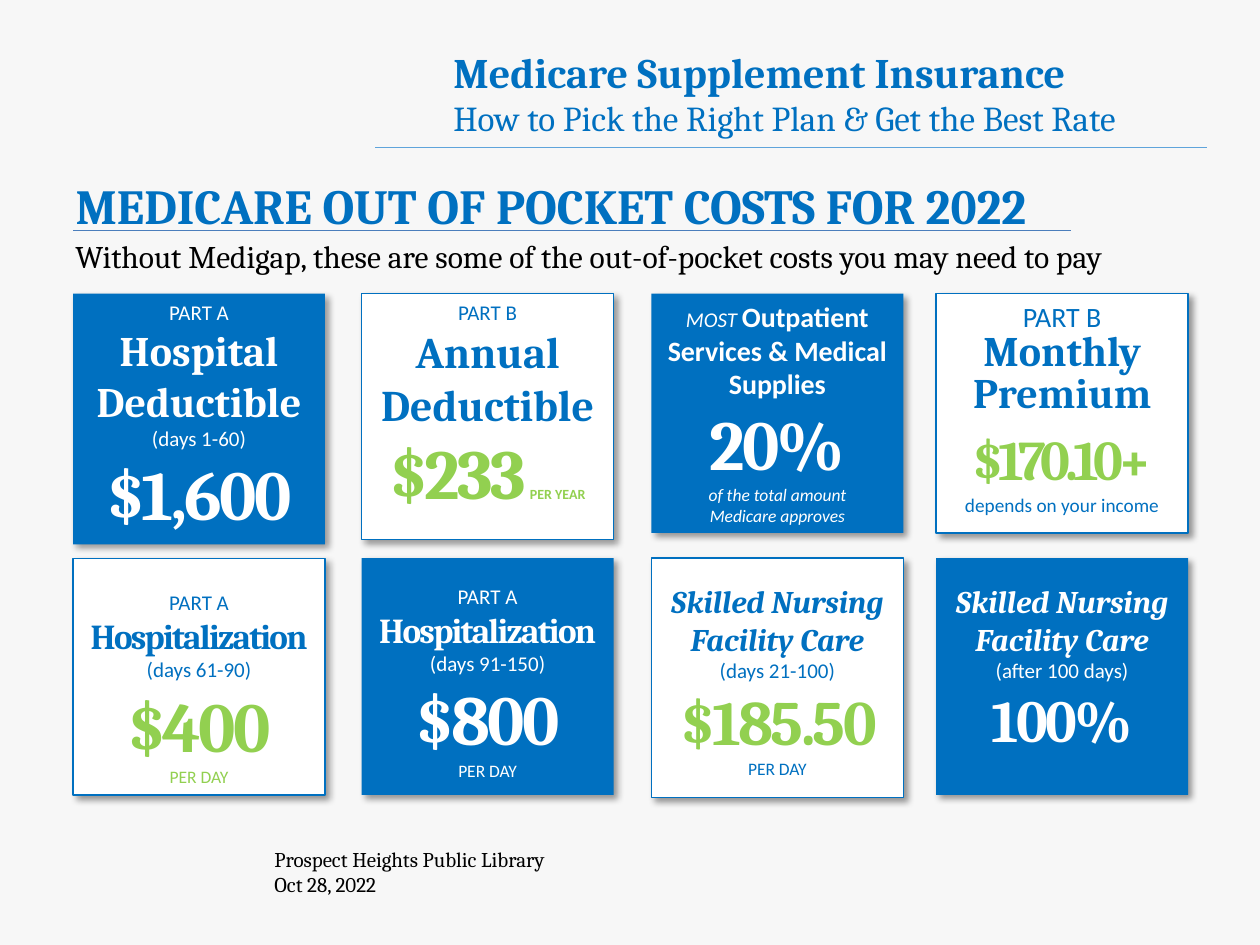
from pptx import Presentation
from pptx.dml.color import RGBColor
from pptx.enum.shapes import MSO_CONNECTOR, MSO_SHAPE
from pptx.enum.text import MSO_ANCHOR, MSO_AUTO_SIZE, PP_ALIGN
from pptx.oxml import parse_xml
from pptx.oxml.ns import nsdecls, qn
from pptx.util import Inches, Pt

RECT = MSO_SHAPE.RECTANGLE
LINE = MSO_CONNECTOR.STRAIGHT
TOP = MSO_ANCHOR.TOP
FIXED = MSO_AUTO_SIZE.NONE
LEFT, MID = PP_ALIGN.LEFT, PP_ALIGN.CENTER
HEAD, BODY = "Cambria", "Calibri"
HEX = {"back": "F7F7F7", "blue": "0070C0", "white": "FFFFFF", "green": "92D050",
       "black": "000000", "sky": "5FA4DB", "rule": "4B7EBC"}
COLOR = {name: RGBColor.from_string(code) for name, code in HEX.items()}


def write(frame, paras, ink, align=LEFT):
    frame.word_wrap = True
    frame.auto_size = FIXED
    frame.vertical_anchor = TOP
    for i, runs in enumerate(paras):
        para = frame.paragraphs[0] if i == 0 else frame.add_paragraph()
        para.alignment = align
        for text, size, face, style, gap, tint in runs:
            if text == "\n":
                para.add_line_break()
                continue
            run = para.add_run()
            run.text = text
            font = run.font
            font.size, font.name = Pt(size), face
            font.bold, font.italic = "b" in style, "i" in style
            font.color.rgb = COLOR[tint or ink]
            if gap:
                run._r.get_or_add_rPr().set("spc", str(int(gap * 100)))


def bit(text, size, face=BODY, style="", gap=0, tint=None):
    return text, size, face, style, gap, tint


deck = Presentation()
deck.slide_width, deck.slide_height = Inches(10), Inches(7.5)
slide = deck.slides.add_slide(deck.slide_layouts[5])
slide.background.fill.solid()
slide.background.fill.fore_color.rgb = COLOR["back"]

title = slide.shapes.title
title.left, title.top = Inches(0.5), Inches(1.34)
title.width, title.height = Inches(9), Inches(0.57)
write(title.text_frame, [[bit("MEDICARE OUT OF POCKET COSTS FOR 2022", 28, HEAD, "b")]], "blue")

texts = [
    (2.08, 6.67, 3.5, 0.5, "black",
     [[bit("Prospect Heights Public Library", 12, HEAD)], [bit("Oct 28, 2022", 12, HEAD)]]),
    (3.5, 0.32, 6.17, 0.84, "blue",
     [[bit("Medicare Supplement Insurance", 24, HEAD, "b"), bit("\n", 24),
       bit("How to Pick the Right Plan & Get the Best Rate", 20, HEAD)]]),
    (0.5, 1.83, 8.83, 0.4, "black",
     [[bit("Without Medigap, these are some of the out-of-pocket costs you may need to pay",
           18, HEAD)]]),
]
for x, y, wide, high, ink, paras in texts:
    box = slide.shapes.add_textbox(Inches(x), Inches(y), Inches(wide), Inches(high))
    write(box.text_frame, paras, ink)

for x, end, y, ink in [(2.98, 9.58, 1.17, "sky"), (0.58, 8.5, 1.83, "rule")]:
    rule = slide.shapes.add_connector(LINE, Inches(x), Inches(y), Inches(end), Inches(y))
    rule.line.color.rgb = COLOR[ink]
    rule.line.width = Pt(0.75)
    rule._element.spPr.append(parse_xml(f"<a:effectLst {nsdecls('a')}/>"))

cols = [0.58, 2.87, 5.17, 7.43]
rows = [2.33, 4.43]
nurse = [bit("Skilled Nursing Facility Care", 18, HEAD, "bi")]
stay = [bit("Hospitalization", 20, HEAD, "b", -1)]
cards = [
    (1.99, 0.05, [
        [bit("PART A", 12)],
        [bit("Hospital Deductible", 24, HEAD, "b")],
        [bit("(days 1-60)", 12)],
        [bit("$1,600", 40, HEAD, "b", -1.5)]]),
    (1.95, 0.05, [
        [bit("PART B", 12)],
        [bit("Annual Deductible", 25, HEAD, "b")],
        [bit("$233", 40, HEAD, "b", -1.5, "green"), bit(" ", 10, HEAD, "b", -1.5),
         bit("PER YEAR", 8, BODY, "b", 0, "green")]]),
    (1.9, 0.05, [
        [bit("MOST ", 12, BODY, "i"),
         bit("Outpatient Services & Medical Supplies", 16, BODY, "b")],
        [bit("20%", 40, HEAD, "b", -1.5)],
        [bit("of the total amount", 10, BODY, "i")],
        [bit("Medicare approves", 10, BODY, "i")]]),
    (1.9, 0.05, [
        [bit("PART B", 16)],
        [bit("Monthly Premium", 24, HEAD, "b")],
        [bit("$170.10+", 32, HEAD, "b", -3, "green"), bit(" ", 36, HEAD, "b", -1.5),
         bit("depends on your income", 11)]]),
    (1.88, 0.25, [
        [bit("PART A", 12)], stay, [bit("(days 61-90)", 12)],
        [bit("$400", 40, HEAD, "b", -1.5, "green")],
        [bit("PER DAY", 10, tint="green")]]),
    (1.88, 0.2, [
        [bit("PART A", 12)], stay, [bit("(days 91-150)", 12)],
        [bit("$800", 40, HEAD, "b", -1.5)],
        [bit("PER DAY", 10)]]),
    (1.9, 0.19, [
        nurse, [bit("(days 21-100)", 12)],
        [bit("$185.50 ", 36, HEAD, "b", -1.5, "green"), bit("PER DAY", 10)]]),
    (1.88, 0.19, [
        nurse, [bit("(after 100 days)", 12)],
        [bit("100%", 34, HEAD, "b", -1.5)]]),
]
for i, (high, inset, paras) in enumerate(cards):
    row, col = divmod(i, len(cols))
    dark = (row + col) % 2 == 0
    card = slide.shapes.add_shape(RECT, Inches(cols[col]), Inches(rows[row]),
                                  Inches(2), Inches(high))
    card.fill.solid()
    card.fill.fore_color.rgb = COLOR["blue" if dark else "white"]
    if dark:
        card.line.fill.background()
    else:
        card.line.color.rgb = COLOR["blue"]
        card.line.width = Pt(0.75)
    card.shadow.inherit = False
    card._element.spPr.find(qn("a:effectLst")).append(parse_xml(
        f'<a:outerShdw {nsdecls("a")} blurRad="{Pt(4)}" dist="{Pt(3)}" dir="2700000" '
        f'algn="tl" rotWithShape="0"><a:srgbClr val="{HEX["black"]}">'
        '<a:alpha val="40000"/></a:srgbClr></a:outerShdw>'))
    frame = card.text_frame
    frame.margin_top = Inches(inset)
    write(frame, paras, "white" if dark else "blue", MID)
    if i == 3:
        frame.paragraphs[1].line_spacing = Pt(24)

deck.save("out.pptx")
